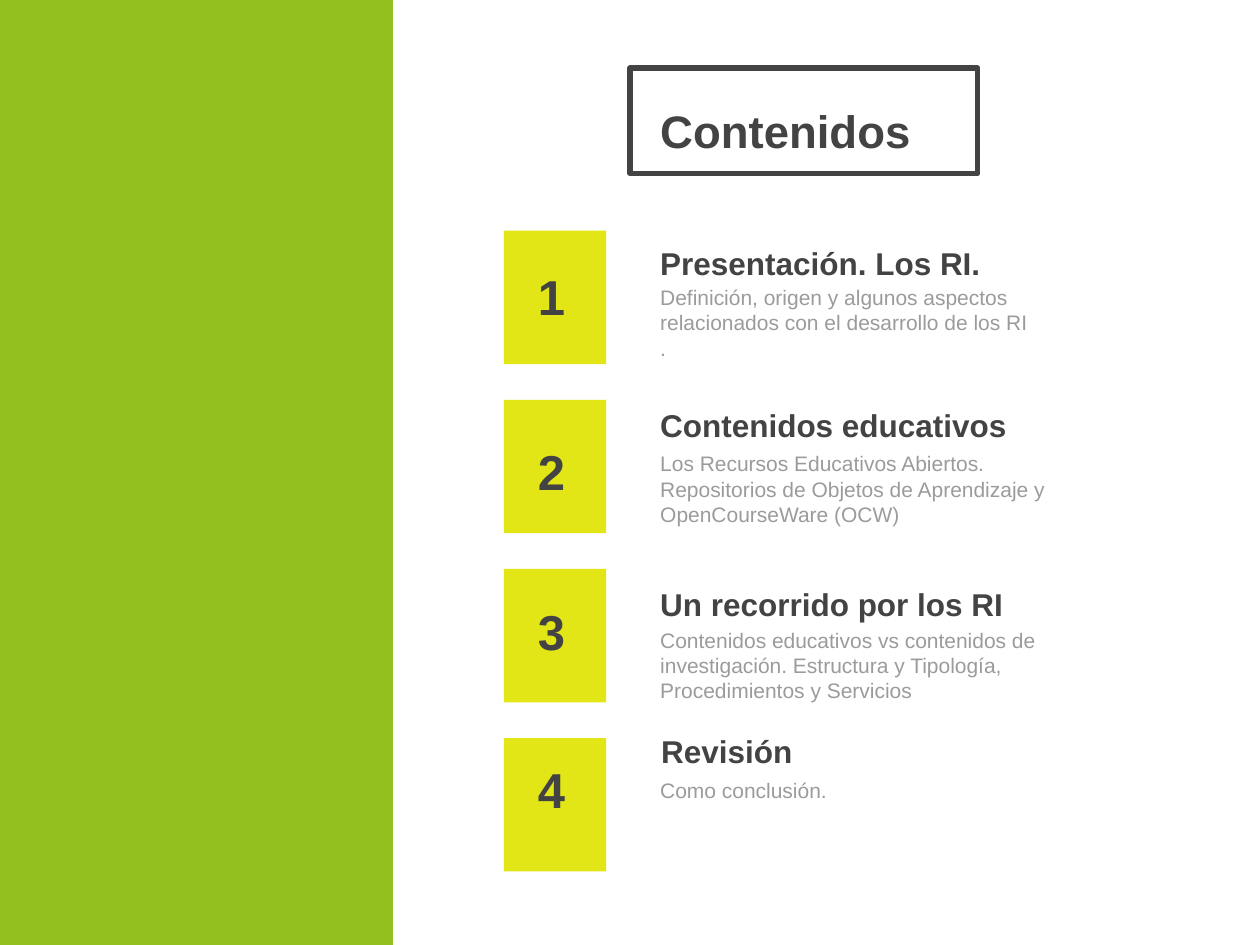
"""Build a contents slide with four numbered sections."""
from dataclasses import dataclass

from pptx import Presentation
from pptx.dml.color import RGBColor
from pptx.enum.shapes import MSO_SHAPE
from pptx.enum.text import MSO_ANCHOR, PP_ALIGN
from pptx.shapes.autoshape import Shape
from pptx.slide import Slide
from pptx.util import Cm, Pt
from lxml.etree import SubElement
from pptx.oxml.ns import qn

COLORS = {"green": "93C01F", "yellow": "E2E616", "dark": "434343", "gray": "9B9B9B"}
TEXT_LEFT = 13.06
TILE_TOP = 4.65
TILE_PITCH = 3.41


@dataclass
class Section:
    """Texts of one section and the tops of its parts in centimetres."""
    heading: str
    body: list[str]
    number_top: float
    heading_top: float
    body_top: float
    heading_left: float = TEXT_LEFT


SECTIONS = [
    Section("Presentación. Los RI.",
            ["Definición, origen y algunos aspectos relacionados con el desarrollo de los RI", "."],
            4.78, 3.4, 5.49),
    Section("Contenidos educativos",
            ["Los Recursos Educativos Abiertos.",
             "Repositorios de Objetos de Aprendizaje y",
             "OpenCourseWare (OCW)"],
            8.31, 6.65, 8.84),
    Section("Un recorrido por los RI",
            ["Contenidos educativos vs contenidos de investigación. "
             "Estructura y Tipología, Procedimientos y Servicios"],
            11.53, 10.26, 12.4),
    Section("Revisión", ["Como conclusión."], 14.73, 13.23, 15.42, 13.08),
]


def add_rectangle(slide: Slide, left: float, top: float, width: float, height: float,
                  fill: str | None = None, line: str | None = None) -> Shape:
    """Draw a rectangle with an optional fill and an optional outline."""
    shape = slide.shapes.add_shape(MSO_SHAPE.RECTANGLE, Cm(left), Cm(top), Cm(width), Cm(height))
    shape.shadow.inherit = False
    if fill:
        shape.fill.solid()
        shape.fill.fore_color.rgb = RGBColor.from_string(COLORS[fill])
    else:
        shape.fill.background()
    if line:
        shape.line.color.rgb = RGBColor.from_string(COLORS[line])
        shape.line.width = Pt(3)
        SubElement(shape.line._get_or_add_ln(), qn("a:round"))
    else:
        shape.line.fill.background()
    return shape


def add_text(slide: Slide, lines: list[str], left: float, top: float, width: float,
             height: float, *, size: int, color: str = "dark", bold: bool = True,
             anchor: MSO_ANCHOR = MSO_ANCHOR.MIDDLE, align: PP_ALIGN = PP_ALIGN.LEFT,
             spacing: float = 1.0) -> None:
    """Place a text box with one paragraph for each line."""
    box = slide.shapes.add_textbox(Cm(left), Cm(top), Cm(width), Cm(height))
    frame = box.text_frame
    frame.word_wrap = True
    frame.vertical_anchor = anchor
    frame.margin_left = frame.margin_right = frame.margin_top = frame.margin_bottom = Cm(0.25)
    frame.text = "\n".join(lines)
    for paragraph in frame.paragraphs:
        paragraph.alignment = align
        paragraph.line_spacing = spacing
        font = paragraph.font
        font.name, font.size, font.bold = "Arial", Pt(size), bold
        font.color.rgb = RGBColor.from_string(COLORS[color])


def add_section(slide: Slide, index: int, section: Section) -> None:
    """Draw the numbered tile, heading and body of a section."""
    add_rectangle(slide, 10.16, TILE_TOP + index * TILE_PITCH, 2.06, 2.69, fill="yellow")
    add_text(slide, [str(index + 1)], 9.37, section.number_top, 3.5, 2.36,
             size=28, align=PP_ALIGN.CENTER)
    add_text(slide, [section.heading], section.heading_left, section.heading_top, 11.5, 2.54,
             size=18, anchor=MSO_ANCHOR.BOTTOM)
    add_text(slide, section.body, TEXT_LEFT, section.body_top, 9.4, 2.13,
             size=12, color="gray", bold=False, anchor=MSO_ANCHOR.TOP)


def main() -> None:
    """Create the presentation and save it."""
    presentation = Presentation()
    presentation.slide_width, presentation.slide_height = Cm(25.4), Cm(19.05)
    slide = presentation.slides.add_slide(presentation.slide_layouts[6])
    add_rectangle(slide, 0, 0, 7.92, 19.05, fill="green")
    add_rectangle(slide, 12.7, 1.37, 7.01, 2.13, line="dark")
    add_text(slide, ["Contenidos"], TEXT_LEFT, 0.48, 11.5, 4.11, size=26, spacing=1.15)
    for index, section in enumerate(SECTIONS):
        add_section(slide, index, section)
    presentation.save("out.pptx")


if __name__ == "__main__":
    main()
